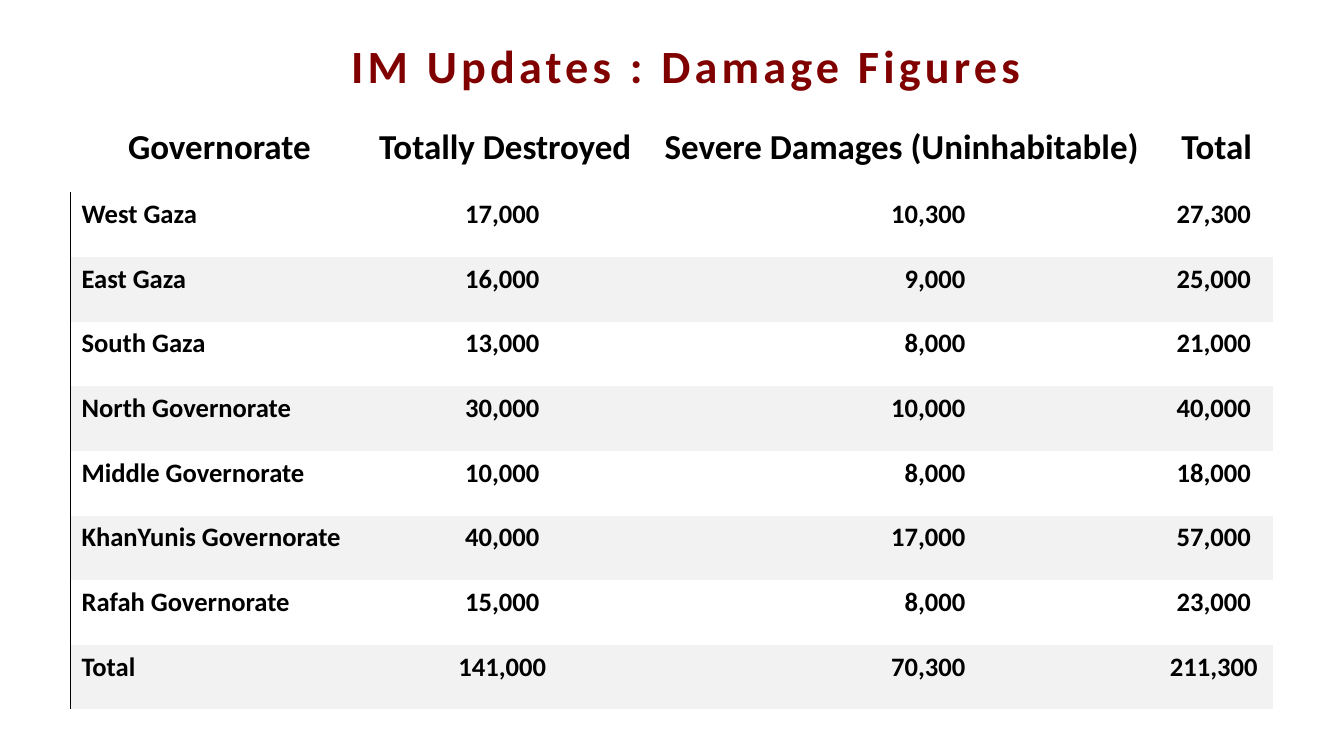
from dataclasses import dataclass
from lxml.etree import SubElement
from pptx import Presentation
from pptx.dml.color import RGBColor
from pptx.enum.text import MSO_ANCHOR, PP_ALIGN
from pptx.oxml import parse_xml
from pptx.oxml.ns import nsdecls, qn
from pptx.util import Inches, Pt


@dataclass(frozen=True)
class Theme:
    font: str = "Calibri"
    title: str = "800000"
    text: str = "000000"
    band: str = "F2F2F2"
    title_size: int = 33
    head_size: int = 25
    body_size: int = 19
    plain: str = "{2D5ABB26-0587-4C30-8999-92F81FD0307C}"  # no style, no grid


THEME = Theme()
WIDE, HIGH = Inches(13.33), Inches(7.5)

# Boxes are left, top, width and height in percent of the slide.
TITLE_BOX = (22.5, 4.27, 57.1, 16.13)
TABLE_BOX = (5.25, 15.6, 89.45, 78.27)
# Shares of the table in percent.
COLS = (23.83, 23.74, 42.2, 10.23)
HEAD_ROW = 12.6

HEADS = ("Governorate", "Totally Destroyed", "Severe Damages (Uninhabitable)", "Total")
DAMAGE = (
    ("West Gaza", 17000, 10300),
    ("East Gaza", 16000, 9000),
    ("South Gaza", 13000, 8000),
    ("North Governorate", 30000, 10000),
    ("Middle Governorate", 10000, 8000),
    ("KhanYunis Governorate", 40000, 17000),
    ("Rafah Governorate", 15000, 8000),
)

# Alignment and right margin in inches of each body column.
FORMATS = (
    (PP_ALIGN.LEFT, 0),
    (PP_ALIGN.CENTER, 0.06),
    (PP_ALIGN.RIGHT, 1.83),
    (PP_ALIGN.CENTER, 0.06),
)


def apply(item, values):
    for name, value in values.items():
        setattr(item, name, value)


def scale(box):
    """Turn percent shares of the slide into lengths."""
    return [int(part * side / 100) for part, side in zip(box, (WIDE, HIGH) * 2)]


def write(frame, text, size, color, align):
    para = frame.paragraphs[0]
    para.alignment = align
    run = para.add_run()
    run.text = text
    apply(run.font, {"name": THEME.font, "size": Pt(size), "bold": True})
    run.font.color.rgb = RGBColor.from_string(color)
    return run


def add_title(slide, box):
    frame = slide.shapes.add_textbox(*scale(box)).text_frame
    frame.word_wrap = True
    run = write(frame, "IM Updates : Damage Figures", THEME.title_size,
                THEME.title, PP_ALIGN.CENTER)
    run.font._element.set("spc", "300")


def rule_left(cell):
    line = parse_xml(f'<a:lnL {nsdecls("a")} w="{Pt(0.75)}"/>')
    fill = SubElement(line, qn("a:solidFill"))
    SubElement(fill, qn("a:srgbClr"), val=THEME.text)
    cell._tc.get_or_add_tcPr().insert(0, line)


def fill_cell(cell, text, size, align, right, anchor, band):
    apply(cell, {
        "margin_left": Inches(0.11), "margin_top": Inches(0.03),
        "margin_right": Inches(right), "margin_bottom": Inches(0.23),
        "vertical_anchor": anchor,
    })
    write(cell.text_frame, text, size, THEME.text, align)
    if band:
        cell.fill.solid()
        cell.fill.fore_color.rgb = RGBColor.from_string(THEME.band)
    else:
        cell.fill.background()


def tally():
    """Add the total of each row and the closing row of totals."""
    _, lost, harmed = zip(*DAMAGE)
    rows = DAMAGE + (("Total", sum(lost), sum(harmed)),)
    return [(name, f"{a:,}", f"{b:,}", f"{a + b:,}") for name, a, b in rows]


def add_figures(slide, box):
    left, top, width, height = scale(box)
    body = tally()
    table = slide.shapes.add_table(
        len(body) + 1, len(HEADS), left, top, width, height).table
    table.horz_banding = False
    table._tbl.tblPr.find(qn("a:tableStyleId")).text = THEME.plain
    for col, share in zip(table.columns, COLS):
        col.width = int(width * share / 100)
    head = int(height * HEAD_ROW / 100)
    for num, row in enumerate(table.rows):
        row.height = (height - head) // len(body) if num else head
    for col, text in enumerate(HEADS):
        fill_cell(table.cell(0, col), text, THEME.head_size,
                  PP_ALIGN.CENTER, 0, MSO_ANCHOR.BOTTOM, False)
    for num, texts in enumerate(body, 1):
        for col, (text, (align, right)) in enumerate(zip(texts, FORMATS)):
            fill_cell(table.cell(num, col), text, THEME.body_size,
                      align, right, MSO_ANCHOR.MIDDLE, num % 2 == 0)
        rule_left(table.cell(num, 0))


def main():
    deck = Presentation()
    apply(deck, {"slide_width": WIDE, "slide_height": HIGH})
    slide = deck.slides.add_slide(deck.slide_layouts[6])
    add_figures(slide, TABLE_BOX)
    add_title(slide, TITLE_BOX)
    deck.save("out.pptx")


if __name__ == "__main__":
    main()
